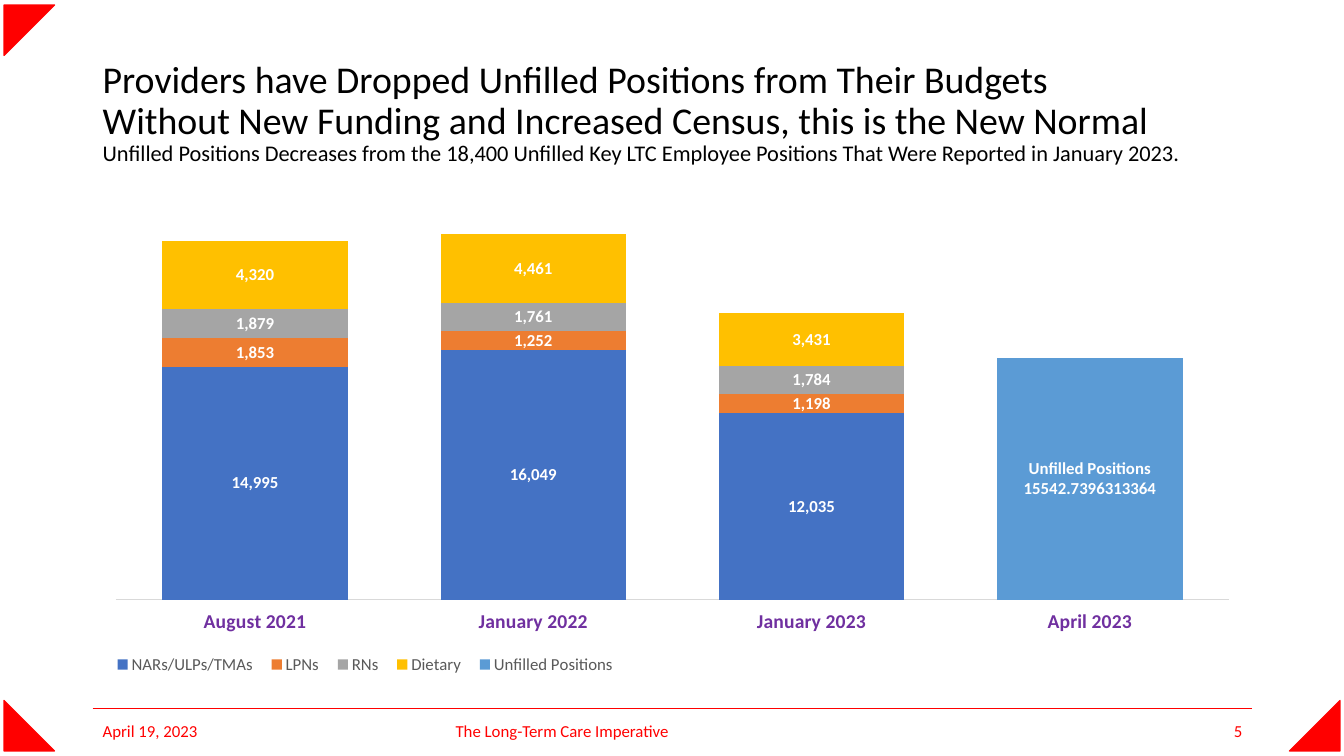
from pptx import Presentation
from pptx.chart.data import CategoryChartData
from pptx.dml.color import RGBColor
from pptx.enum.chart import XL_CHART_TYPE as ChartType
from pptx.enum.chart import XL_LABEL_POSITION as LabelPosition
from pptx.enum.chart import XL_LEGEND_POSITION as LegendPosition
from pptx.enum.chart import XL_TICK_LABEL_POSITION as TickLabels
from pptx.enum.chart import XL_TICK_MARK as TickMark
from pptx.enum.shapes import MSO_CONNECTOR as Connector
from pptx.enum.shapes import MSO_SHAPE as Shape
from pptx.enum.text import MSO_ANCHOR as Anchor
from pptx.enum.text import PP_ALIGN as Align
from pptx.oxml import parse_xml
from pptx.oxml.ns import nsdecls, qn
from pptx.util import Inches, Pt

FONT = "Calibri"
COLORS = {
    "accent": "FF0000",
    "title": "000000",
    "white": "FFFFFF",
    "months": "7030A0",
    "legend": "595959",
    "axis": "D9D9D9",
    "NARs/ULPs/TMAs": "4472C4",
    "LPNs": "ED7D31",
    "RNs": "A5A5A5",
    "Dietary": "FFC000",
    "Unfilled Positions": "5B9BD5",
}
MONTHS = ["August 2021", "January 2022", "January 2023", "April 2023"]
POSITIONS = {
    "NARs/ULPs/TMAs": [14995, 16049, 12035, None],
    "LPNs": [1853, 1252, 1198, None],
    "RNs": [1879, 1761, 1784, None],
    "Dietary": [4320, 4461, 3431, None],
    "Unfilled Positions": [None, None, None, 15542.7396313364],
}
TITLE_LINES = [
    ("Providers have Dropped Unfilled Positions from Their Budgets", 27),
    ("Without New Funding and Increased Census, this is the New Normal", 27),
    ("Unfilled Positions Decreases from the 18,400 Unfilled Key LTC Employee "
     "Positions That Were Reported in January 2023.", 16),
]
LEFT, WIDTH = 0.92, 11.5


def color(name):
    return RGBColor.from_string(COLORS[name])


def style_font(font, size, color_name, bold=False):
    font.name = FONT
    font.size = Pt(size)
    font.bold = bold
    font.color.rgb = color(color_name)


def add_corner(slide, left, top, rotation):
    corner = slide.shapes.add_shape(
        Shape.RIGHT_TRIANGLE, Inches(left), Inches(top), Inches(0.5), Inches(0.5))
    corner.rotation = rotation
    corner.shadow.inherit = False
    corner.fill.solid()
    corner.fill.fore_color.rgb = color("accent")
    corner.line.color.rgb = color("accent")
    corner.line.width = Pt(1)


def add_footer_rule(slide):
    rule = slide.shapes.add_connector(
        Connector.STRAIGHT, Inches(LEFT), Inches(7.03), Inches(LEFT + WIDTH), Inches(7.03))
    rule.line.color.rgb = color("accent")
    rule.line.width = Pt(0.5)
    rule._element.spPr.append(parse_xml(f"<a:effectLst {nsdecls('a')}/>"))


def add_text_frame(slide, left, top, width, height):
    frame = slide.shapes.add_textbox(
        Inches(left), Inches(top), Inches(width), Inches(height)).text_frame
    frame.word_wrap = True
    frame.vertical_anchor = Anchor.MIDDLE
    return frame


def add_title(slide):
    heading = add_text_frame(slide, LEFT, 0.4, WIDTH, 1.45).paragraphs[0]
    heading.line_spacing = 0.9
    for index, (text, size) in enumerate(TITLE_LINES):
        if index:
            heading.add_line_break()
        run = heading.add_run()
        run.text = text
        style_font(run.font, size, "title")


def add_footer(slide, text, left, width, align=Align.LEFT):
    footer = add_text_frame(slide, left, 7.05, width, 0.4).paragraphs[0]
    footer.text = text
    footer.alignment = align
    style_font(footer.font, 12, "accent")


def manual_layout(x, y, width, height, inner=False):
    target = '<c:layoutTarget val="inner"/>' if inner else ""
    return parse_xml(
        f"<c:layout {nsdecls('c')}><c:manualLayout>{target}"
        '<c:xMode val="edge"/><c:yMode val="edge"/>'
        f'<c:x val="{x}"/><c:y val="{y}"/><c:w val="{width}"/><c:h val="{height}"/>'
        "</c:manualLayout></c:layout>")


def place_after(parent, layout, sibling=None):
    """Put a layout first in its parent, or right after the sibling."""
    for old in parent.findall(qn("c:layout")):
        parent.remove(old)
    if sibling is None:
        parent.insert(0, layout)
    else:
        sibling.addnext(layout)


def style_axes(chart):
    months = chart.category_axis
    months.tick_label_position = TickLabels.LOW
    months.major_tick_mark = TickMark.NONE
    months.has_major_gridlines = False
    months.format.line.color.rgb = color("axis")
    months.format.line.width = Pt(0.75)
    style_font(months.tick_labels.font, 14, "months", bold=True)

    counts = chart.value_axis
    counts.minimum_scale, counts.maximum_scale = 0, 25000
    counts.has_major_gridlines = False
    counts.visible = False


def style_series(series):
    series.format.fill.solid()
    series.format.fill.fore_color.rgb = color(series.name)
    labels = series.data_labels
    labels.show_value = True
    labels.position = LabelPosition.CENTER
    style_font(labels.font, 12, "white", bold=True)
    if series.name != "Unfilled Positions":
        labels.number_format = "#,##0"
        labels.number_format_is_linked = False


def name_april_label(series):
    """Show the series name above the value on the last column."""
    label = series.points[len(MONTHS) - 1].data_label
    style_font(label.font, 12, "white", bold=True)
    label.position = LabelPosition.CENTER
    element = series._element.find(".//" + qn("c:dLbl"))
    element.find(qn("c:showSerName")).set("val", "1")
    element.find(qn("c:showBubbleSize")).addnext(
        parse_xml(f"<c:separator {nsdecls('c')}>\n</c:separator>"))


def add_positions_chart(slide):
    data = CategoryChartData()
    data.categories = MONTHS
    for name, values in POSITIONS.items():
        data.add_series(name, values)
    chart = slide.shapes.add_chart(
        ChartType.COLUMN_STACKED, Inches(LEFT), Inches(2), Inches(WIDTH), Inches(4.76),
        data).chart
    chart.has_title = False
    style_font(chart.font, 10, "title")
    style_axes(chart)

    # Columns
    plot = chart.plots[0]
    plot.gap_width, plot.overlap = 50, 100
    plot.vary_by_categories = False
    for series in plot.series:
        style_series(series)
    name_april_label(plot.series[len(POSITIONS) - 1])

    # Legend
    chart.has_legend = True
    legend = chart.legend
    legend.position = LegendPosition.BOTTOM
    legend.include_in_layout = False
    style_font(legend.font, 12, "legend")

    # Placement inside the chart frame
    place_after(chart._chartSpace.chart.plotArea,
                manual_layout(0.02, 0.02, 0.96, 0.81, inner=True))
    place_after(legend._element, manual_layout(0.01, 0.93, 0.45, 0.07),
                legend._element.find(qn("c:legendPos")))


def main():
    deck = Presentation()
    deck.slide_width, deck.slide_height = Inches(13.33), Inches(7.5)
    slide = deck.slides.add_slide(deck.slide_layouts[6])

    # Frame
    for left, top, rotation in [(0.04, 0.05, 90), (12.79, 6.95, 270), (0.04, 6.95, 0)]:
        add_corner(slide, left, top, rotation)
    add_footer_rule(slide)

    # Content
    add_title(slide)
    add_positions_chart(slide)

    # Footer
    add_footer(slide, "April 19, 2023", LEFT, 3)
    add_footer(slide, "The Long-Term Care Imperative", 4.42, 4.5)
    add_footer(slide, "5", 9.42, 3, Align.RIGHT)
    deck.save("out.pptx")


if __name__ == "__main__":
    main()
